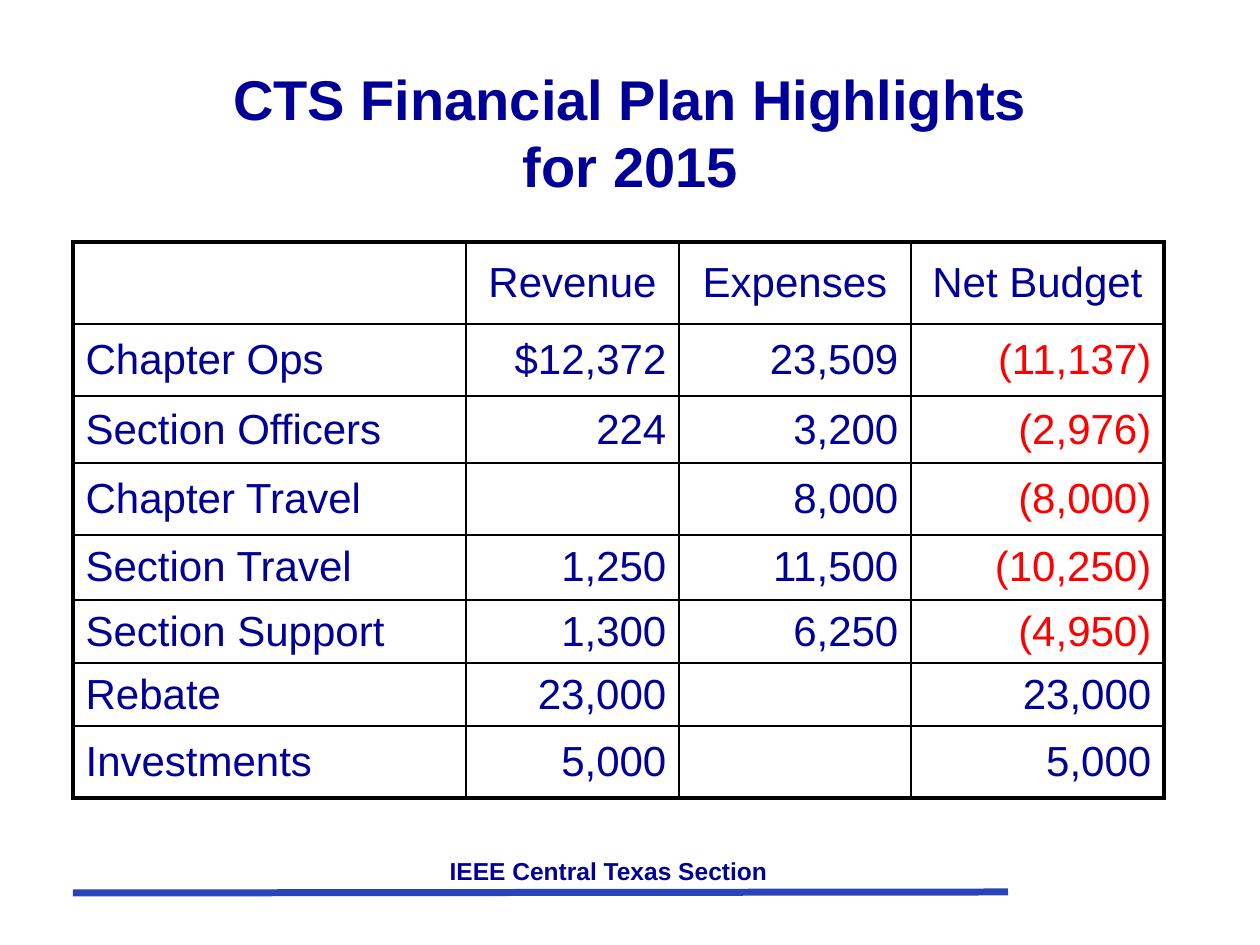
from lxml import etree
from pptx import Presentation
from pptx import util as u
from pptx.dml.color import RGBColor
from pptx.enum import shapes, text
from pptx.oxml.ns import qn

PX = u.Inches(1) / 126
NAVY = RGBColor(0x00, 0x00, 0x99)
RED = RGBColor(0xFF, 0x00, 0x00)
BLUE = RGBColor(0x29, 0x44, 0xB7)
BLACK = RGBColor(0x00, 0x00, 0x00)
LEFT, CENTER, RIGHT = text.PP_ALIGN.LEFT, text.PP_ALIGN.CENTER, text.PP_ALIGN.RIGHT

COL_WIDTHS = [393, 213, 232, 253]
ROW_HEIGHTS = [82, 72, 67, 72, 65, 63, 63, 72]
BUDGET = [
    ["", "Revenue", "Expenses", "Net Budget"],
    ["Chapter Ops", "$12,372", "23,509", "(11,137)"],
    ["Section Officers", "224", "3,200", "(2,976)"],
    ["Chapter Travel", "", "8,000", "(8,000)"],
    ["Section Travel", "1,250", "11,500", "(10,250)"],
    ["Section Support", "1,300", "6,250", "(4,950)"],
    ["Rebate", "23,000", "", "23,000"],
    ["Investments", "5,000", "", "5,000"],
]


def px(*lengths):
    return [u.Emu(round(n * PX)) for n in lengths]


def write(tf, content, size=24, color=NAVY, bold=False, align=LEFT):
    p = tf.paragraphs[0]
    p.text = content
    p.alignment = align
    for r in p.runs:
        r.font.name = "Arial"
        r.font.size = u.Pt(size)
        r.font.bold = bold
        r.font.color.rgb = color


def set_border(cell, side, width):
    tcPr = cell._tc.get_or_add_tcPr()
    ln = etree.SubElement(tcPr, qn(f"a:ln{side}"), w=str(u.Pt(width)))
    fill = etree.SubElement(ln, qn("a:solidFill"))
    etree.SubElement(fill, qn("a:srgbClr"), val=str(BLACK))


def add_title(s, box):
    sp = s.shapes.title
    sp.left, sp.top, sp.width, sp.height = px(*box)
    tf = sp.text_frame
    tf.word_wrap = True
    tf.auto_size = text.MSO_AUTO_SIZE.NONE
    tf.vertical_anchor = text.MSO_ANCHOR.MIDDLE
    write(tf, "CTS Financial Plan Highlights\vfor 2015", size=32, bold=True, align=CENTER)


def add_budget_table(s, x, y):
    rows, cols = len(ROW_HEIGHTS), len(COL_WIDTHS)
    frame = s.shapes.add_table(rows, cols, *px(x, y, sum(COL_WIDTHS), sum(ROW_HEIGHTS)))
    table = frame.table
    table.first_row = table.horz_banding = False
    for column, width in zip(table.columns, px(*COL_WIDTHS)):
        column.width = width
    for row, height in zip(table.rows, px(*ROW_HEIGHTS)):
        row.height = height
    for i, values in enumerate(BUDGET):
        for j, value in enumerate(values):
            cell = table.cell(i, j)
            cell.vertical_anchor = text.MSO_ANCHOR.MIDDLE
            align = CENTER if i == 0 else LEFT if j == 0 else RIGHT
            color = RED if value.startswith("(") else NAVY
            write(cell.text_frame, value, color=color, align=align)
            outer = {"L": j == 0, "R": j == cols - 1, "T": i == 0, "B": i == rows - 1}
            for side, is_outer in outer.items():
                set_border(cell, side, 2.25 if is_outer else 1)
            cell.fill.background()


def add_footer(s, x, y, w):
    line = s.shapes.add_connector(shapes.MSO_CONNECTOR.STRAIGHT, *px(x, y + 43, x + w, y + 42))
    line.line.color.rgb = BLUE
    line.line.width = u.Pt(4)
    etree.SubElement(line._element.spPr, qn("a:effectLst"))
    sp = s.shapes.add_textbox(*px(x + 147, y, 777, 42))
    sp.text_frame.word_wrap = True
    write(sp.text_frame, "IEEE Central Texas Section", size=14, bold=True, align=CENTER)


def main():
    prs = Presentation()
    prs.slide_width, prs.slide_height = px(1260, 945)
    s = prs.slides.add_slide(prs.slide_layouts[5])
    add_footer(s, 73, 850, 935)
    add_title(s, (95, 53, 1071, 158))
    add_budget_table(s, 73, 242)
    prs.save("out.pptx")


if __name__ == "__main__":
    main()
